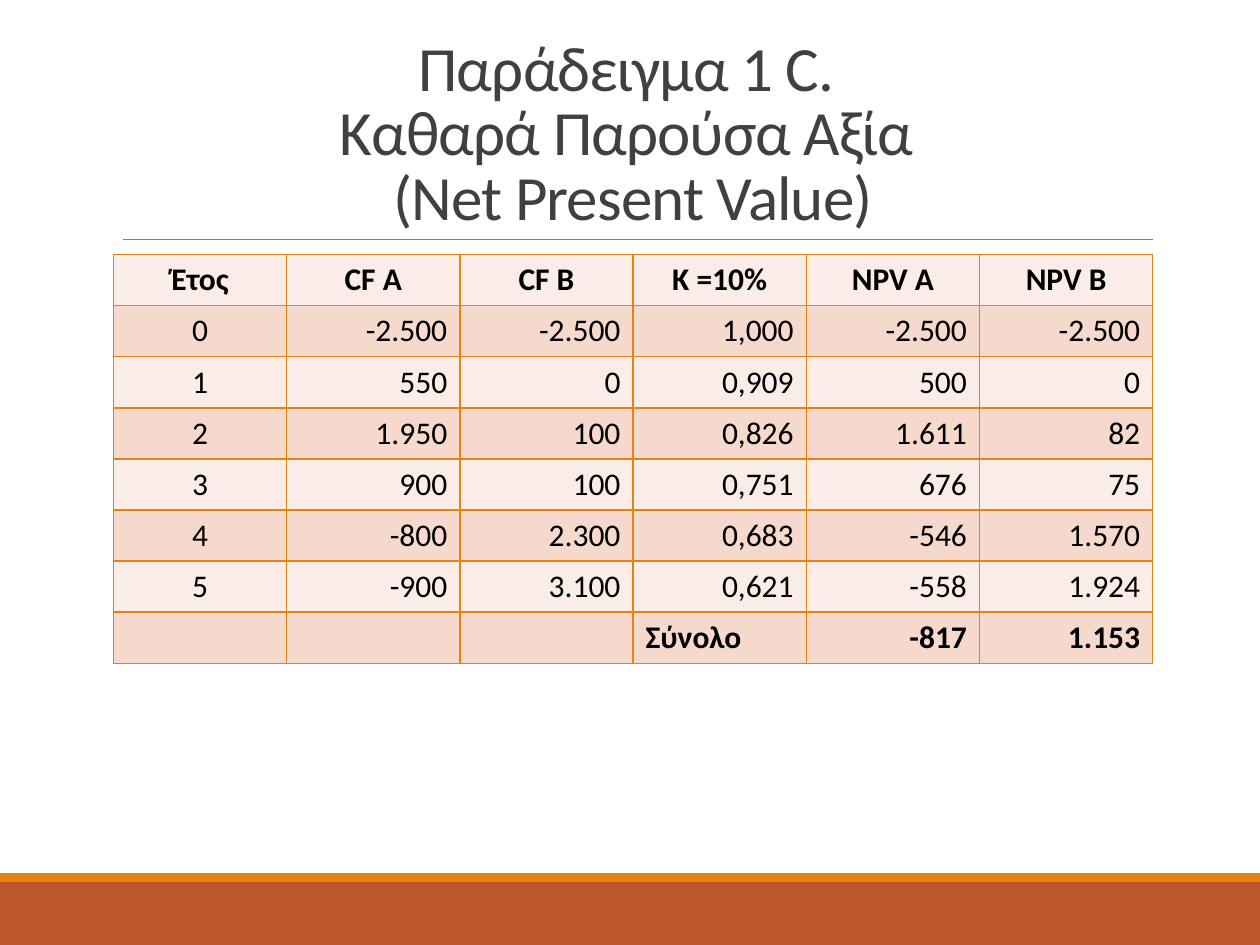
from dataclasses import dataclass

from lxml import etree
from pptx import Presentation
from pptx import util as u
from pptx.dml.color import RGBColor
from pptx.enum import shapes, text
from pptx.oxml.ns import qn


@dataclass(frozen=True)
class Theme:
    font: str = "Calibri"
    title_size: int = 36
    cell_size: int = 18
    title: str = "404040"
    ink: str = "000000"
    rule: str = "808080"
    footer: str = "BD582C"
    accent: str = "E48312"
    bands: tuple = ("FAEDE7", "F5D9CC")


THEME = Theme()
LEFT, WIDTH = 0.9, 8.25
ROW_HEIGHT = 0.405
TITLE = ("Παράδειγμα 1 C. ", "Καθαρά Παρούσα Αξία ", "(Net Present Value)")
ROWS = [
    ("Έτος", "CF A", "CF B", "K =10%", "NPV A", "NPV B"),
    ("0", "-2.500", "-2.500", "1,000", "-2.500", "-2.500"),
    ("1", "550", "0", "0,909", "500", "0"),
    ("2", "1.950", "100", "0,826", "1.611", "82"),
    ("3", "900", "100", "0,751", "676", "75"),
    ("4", "-800", "2.300", "0,683", "-546", "1.570"),
    ("5", "-900", "3.100", "0,621", "-558", "1.924"),
    ("", "", "", "Σύνολο", "-817", "1.153"),
]


def rgb(color):
    return RGBColor.from_string(color)


def style_font(font, size, color, bold=False):
    font.name, font.size, font.bold = THEME.font, u.Pt(size), bold
    font.color.rgb = rgb(color)


def add_band(s, top, height, color):
    """Draw a full-width bar at the foot of the slide."""
    sp = s.shapes.add_shape(shapes.MSO_SHAPE.RECTANGLE, 0, u.Inches(top),
                            u.Inches(10), u.Inches(height))
    sp.shadow.inherit = False
    sp.fill.solid()
    sp.fill.fore_color.rgb = rgb(color)
    sp.line.fill.background()


def add_rule(s, x1, x2, y):
    line = s.shapes.add_connector(shapes.MSO_CONNECTOR.STRAIGHT, u.Inches(x1),
                                  u.Inches(y), u.Inches(x2), u.Inches(y))
    line.line.color.rgb = rgb(THEME.rule)
    line.line.width = u.Pt(0.5)
    etree.SubElement(line._element.spPr, qn("a:effectLst"))


def set_title(s):
    sp = s.shapes.title
    sp.left, sp.top = u.Inches(LEFT), u.Inches(0.31)
    sp.width, sp.height = u.Inches(WIDTH), u.Inches(1.59)
    tf = sp.text_frame
    tf.text = "\v".join(TITLE)
    tf.word_wrap = True
    tf.auto_size = text.MSO_AUTO_SIZE.NONE
    tf.vertical_anchor = text.MSO_ANCHOR.BOTTOM
    p = tf.paragraphs[0]
    p.alignment, p.line_spacing = text.PP_ALIGN.CENTER, 0.85
    style_font(p.font, THEME.title_size, THEME.title)
    for r in p.runs:
        r.font._element.set("spc", "-50")


def add_borders(cell):
    """Outline a cell; borders must come before the fill in tcPr."""
    tcPr = cell._tc.get_or_add_tcPr()
    for i, side in enumerate(("lnL", "lnR", "lnT", "lnB")):
        ln = etree.Element(qn(f"a:{side}"), w=str(u.Pt(1)))
        fill = etree.SubElement(ln, qn("a:solidFill"))
        etree.SubElement(fill, qn("a:srgbClr"), val=THEME.accent)
        tcPr.insert(i, ln)


def alignment(row, col, value):
    if row == 0 or col == 0:
        return text.PP_ALIGN.CENTER
    return text.PP_ALIGN.LEFT if value.isalpha() else text.PP_ALIGN.RIGHT


def add_cash_flow_table(s):
    n_rows, n_cols = len(ROWS), len(ROWS[0])
    table = s.shapes.add_table(n_rows, n_cols, u.Inches(LEFT), u.Inches(2.02),
                               u.Inches(WIDTH),
                               u.Inches(ROW_HEIGHT * n_rows)).table
    for i, values in enumerate(ROWS):
        for j, value in enumerate(values):
            cell = table.cell(i, j)
            cell.text = value
            cell.fill.solid()
            cell.fill.fore_color.rgb = rgb(THEME.bands[i % 2])
            add_borders(cell)
            p = cell.text_frame.paragraphs[0]
            p.alignment = alignment(i, j, value)
            style_font(p.font, THEME.cell_size, THEME.ink,
                       bold=i in (0, n_rows - 1))


def main():
    prs = Presentation()
    prs.slide_width, prs.slide_height = u.Inches(10), u.Inches(7.5)
    s = prs.slides.add_slide(prs.slide_layouts[5])
    add_band(s, 7, 0.5, THEME.footer)
    add_band(s, 6.93, 0.07, THEME.accent)
    add_rule(s, 0.98, LEFT + WIDTH, 1.9)
    set_title(s)
    add_cash_flow_table(s)
    prs.save("out.pptx")


if __name__ == "__main__":
    main()
